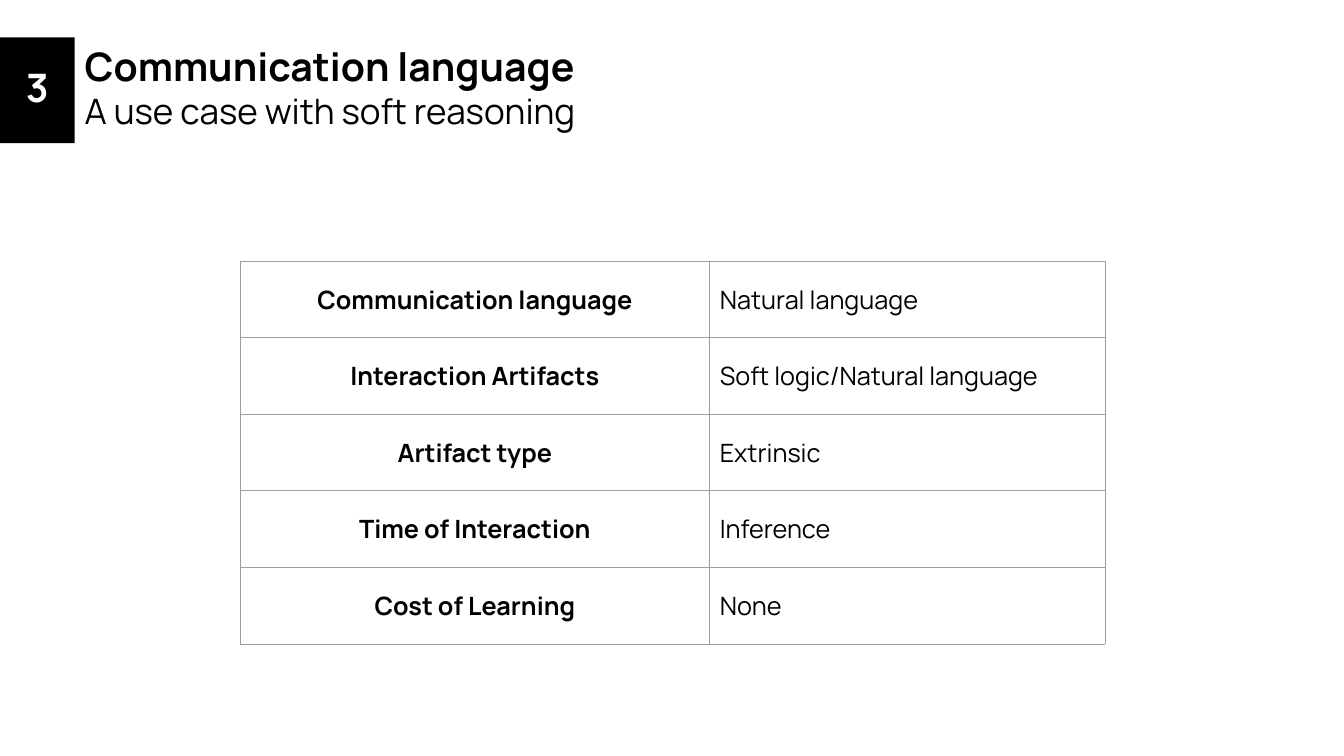
from lxml import etree
from pptx import Presentation
from pptx.dml.color import RGBColor
from pptx.enum.shapes import MSO_SHAPE
from pptx.enum.text import MSO_ANCHOR, MSO_AUTO_SIZE, PP_ALIGN
from pptx.oxml.ns import qn
from pptx.util import Inches, Pt

RECT = MSO_SHAPE.RECTANGLE
TOP, MIDDLE = MSO_ANCHOR.TOP, MSO_ANCHOR.MIDDLE
LEFT, CENTER = PP_ALIGN.LEFT, PP_ALIGN.CENTER
NO_FIT = MSO_AUTO_SIZE.NONE

COLORS = {"ink": "000000", "paper": "FFFFFF", "rule": "9E9E9E"}
FONT = "Manrope"
ROWS = [
    ("Communication language", "Natural language"),
    ("Interaction Artifacts", "Soft logic/Natural language"),
    ("Artifact type", "Extrinsic"),
    ("Time of Interaction", "Inference"),
    ("Cost of Learning", "None"),
]
WIDTHS = [4.66, 3.92]
ROW_H = 0.76


def write(para, text, size, bold, align, color="ink", spacing=1.0):
    para.alignment = align
    para.line_spacing = spacing
    run = para.add_run()
    run.text = text
    look = {"name": FONT, "size": Pt(size), "bold": bold}
    for key, value in look.items():
        setattr(run.font, key, value)
    run.font.color.rgb = RGBColor.from_string(COLORS[color])


def add_borders(cell):
    props = cell._tc.get_or_add_tcPr()
    for i, side in enumerate(("a:lnL", "a:lnR", "a:lnT", "a:lnB")):
        line = etree.Element(qn(side), w=str(Pt(0.75)))
        fill = etree.SubElement(line, qn("a:solidFill"))
        etree.SubElement(fill, qn("a:srgbClr"), val=COLORS["rule"])
        props.insert(i, line)


deck = Presentation()
deck.slide_width = Inches(13.33)
deck.slide_height = Inches(7.5)
slide = deck.slides.add_slide(deck.slide_layouts[5])

# Heading
title = slide.shapes.title
place = {"left": 0.74, "top": 0.37, "width": 11.55, "height": 0.99}
for key, value in place.items():
    setattr(title, key, Inches(value))
frame = title.text_frame
frame.word_wrap = True
frame.auto_size = NO_FIT
frame.vertical_anchor = TOP
write(frame.paragraphs[0], "Communication language", 28, True, LEFT)
write(frame.add_paragraph(), "A use case with soft reasoning", 25, False, LEFT)

# Section number
badge = slide.shapes.add_shape(RECT, 0, Inches(0.37), Inches(0.74), Inches(1.05))
badge.shadow.inherit = False
badge.fill.solid()
badge.fill.fore_color.rgb = RGBColor.from_string(COLORS["ink"])
badge.line.fill.background()
badge.text_frame.vertical_anchor = MIDDLE
write(badge.text_frame.paragraphs[0], "3", 28, True, CENTER, "paper", 0.9)

# Table of traits
table = slide.shapes.add_table(
    len(ROWS), len(WIDTHS), Inches(2.38), Inches(2.59),
    Inches(sum(WIDTHS)), Inches(ROW_H * len(ROWS))).table
table.first_row = False
table.horz_banding = False
for col, width in zip(table.columns, WIDTHS):
    col.width = Inches(width)
for r, texts in enumerate(ROWS):
    table.rows[r].height = Inches(ROW_H)
    for c, text in enumerate(texts):
        cell = table.cell(r, c)
        cell.vertical_anchor = MIDDLE
        for side in ("left", "right", "top", "bottom"):
            setattr(cell, f"margin_{side}", Inches(0.1))
        cell.fill.solid()
        cell.fill.fore_color.rgb = RGBColor.from_string(COLORS["paper"])
        add_borders(cell)
        head = c == 0
        write(cell.text_frame.paragraphs[0], text, 18, head, CENTER if head else LEFT)

deck.save("out.pptx")
